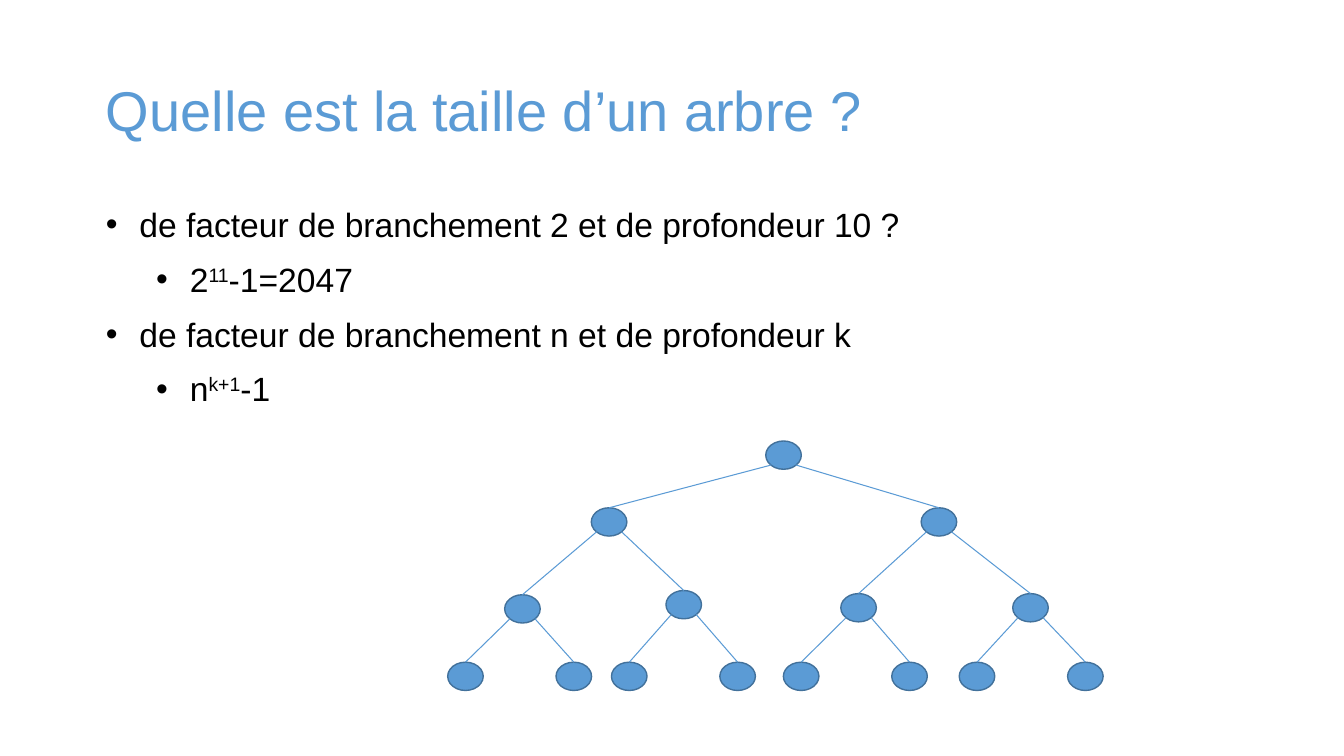
import lxml.etree
import pptx
import pptx.dml.color
import pptx.enum.shapes
import pptx.enum.text
import pptx.oxml.ns
import pptx.util

Pt = pptx.util.Pt
qn = pptx.oxml.ns.qn


def rgb(value):
    return pptx.dml.color.RGBColor.from_string(value)


class Deck:
    """Hold the style and the current slide, and draw its elements."""

    font = "Arial"
    accent, outline, ink = "5B9BD5", "42719B", "000000"
    node_w, node_h = 25.4, 20.2

    def __init__(self):
        self.prs = pptx.Presentation()
        self.prs.slide_width, self.prs.slide_height = Pt(960), Pt(540)
        self.s = self.prs.slides.add_slide(self.prs.slide_layouts[6])

    def box(self, x, y, w, h, anchor):
        tf = self.s.shapes.add_textbox(Pt(x), Pt(y), Pt(w), Pt(h)).text_frame
        form = {"word_wrap": True, "vertical_anchor": anchor,
                "margin_left": Pt(9.6), "margin_right": Pt(9.6),
                "margin_top": Pt(4.8), "margin_bottom": Pt(4.8)}
        for name, value in form.items():
            setattr(tf, name, value)
        return tf

    def add_runs(self, p, runs, size, color):
        p.line_spacing = 0.9
        for text, baseline in runs:
            r = p.add_run()
            r.text = text
            for name, value in {"name": self.font, "size": Pt(size)}.items():
                setattr(r.font, name, value)
            r.font.color.rgb = rgb(color)
            if baseline:
                r.font._element.set("baseline", str(baseline * 1000))

    def title(self, text):
        tf = self.box(66, 28.8, 828, 104.4, pptx.enum.text.MSO_ANCHOR.MIDDLE)
        self.add_runs(tf.paragraphs[0], [(text, 0)], 40, self.accent)

    def bullets(self, items):
        tf = self.box(66, 144, 828, 342.7, pptx.enum.text.MSO_ANCHOR.TOP)
        for i, (level, runs) in enumerate(items):
            p = tf.add_paragraph() if i else tf.paragraphs[0]
            p.level = level
            pPr = p._p.get_or_add_pPr()
            pPr.set("marL", str(Pt(24 + 36 * level)))
            pPr.set("indent", str(Pt(-24)))
            clr = lxml.etree.SubElement(pPr, qn("a:buClr"))
            lxml.etree.SubElement(clr, qn("a:srgbClr"), val=self.ink)
            lxml.etree.SubElement(pPr, qn("a:buFont"), typeface=self.font)
            lxml.etree.SubElement(pPr, qn("a:buChar"), char="•")
            if i:
                p.space_before = Pt(13.3)
            self.add_runs(p, runs, 24, self.ink)

    def node(self, x, y):
        sp = self.s.shapes.add_shape(pptx.enum.shapes.MSO_SHAPE.OVAL, Pt(x), Pt(y),
                                     Pt(self.node_w), Pt(self.node_h))
        sp.shadow.inherit = False
        sp.fill.solid()
        sp.fill.fore_color.rgb = rgb(self.accent)
        sp.line.color.rgb = rgb(self.outline)
        sp.line.width = Pt(1)
        return sp

    def branch(self, child, parent, side):
        x = parent.left + int(parent.width * (0.5 + side * 0.35))
        y = parent.top + int(parent.height * 0.85)
        line = self.s.shapes.add_connector(
            pptx.enum.shapes.MSO_CONNECTOR.STRAIGHT, child.left, child.top, x, y)
        line.begin_connect(child, 0)
        line.line.color.rgb = rgb(self.accent)
        line.line.width = Pt(0.75)
        lxml.etree.SubElement(line._element.spPr, qn("a:effectLst"))

    def tree(self, places):
        nodes = [self.node(x, y) for x, y in places]
        for i, child in enumerate(nodes[1:], 1):
            self.branch(child, nodes[(i - 1) // 2], -1 if i % 2 else 1)


def main():
    deck = Deck()
    deck.title("Quelle est la taille d’un arbre ?")
    deck.bullets([
        (0, [("de facteur de branchement 2 et de profondeur 10 ?", 0)]),
        (1, [("2", 0), ("11", 30), ("-1=2047", 0)]),
        (0, [("de facteur de branchement n et de profondeur k", 0)]),
        (1, [("n", 0), ("k+1", 30), ("-1", 0)]),
    ])
    inner = [(547, 315), (422.4, 362.7), (658, 362.7),
             (360.5, 424.8), (475.7, 421.8), (600.6, 424), (723.4, 424)]
    leaves = [(x + dx, 473) for x in (319.8, 436.8, 559.6, 685.2) for dx in (0, 77.4)]
    deck.tree(inner + leaves)
    deck.prs.save("out.pptx")


if __name__ == "__main__":
    main()
